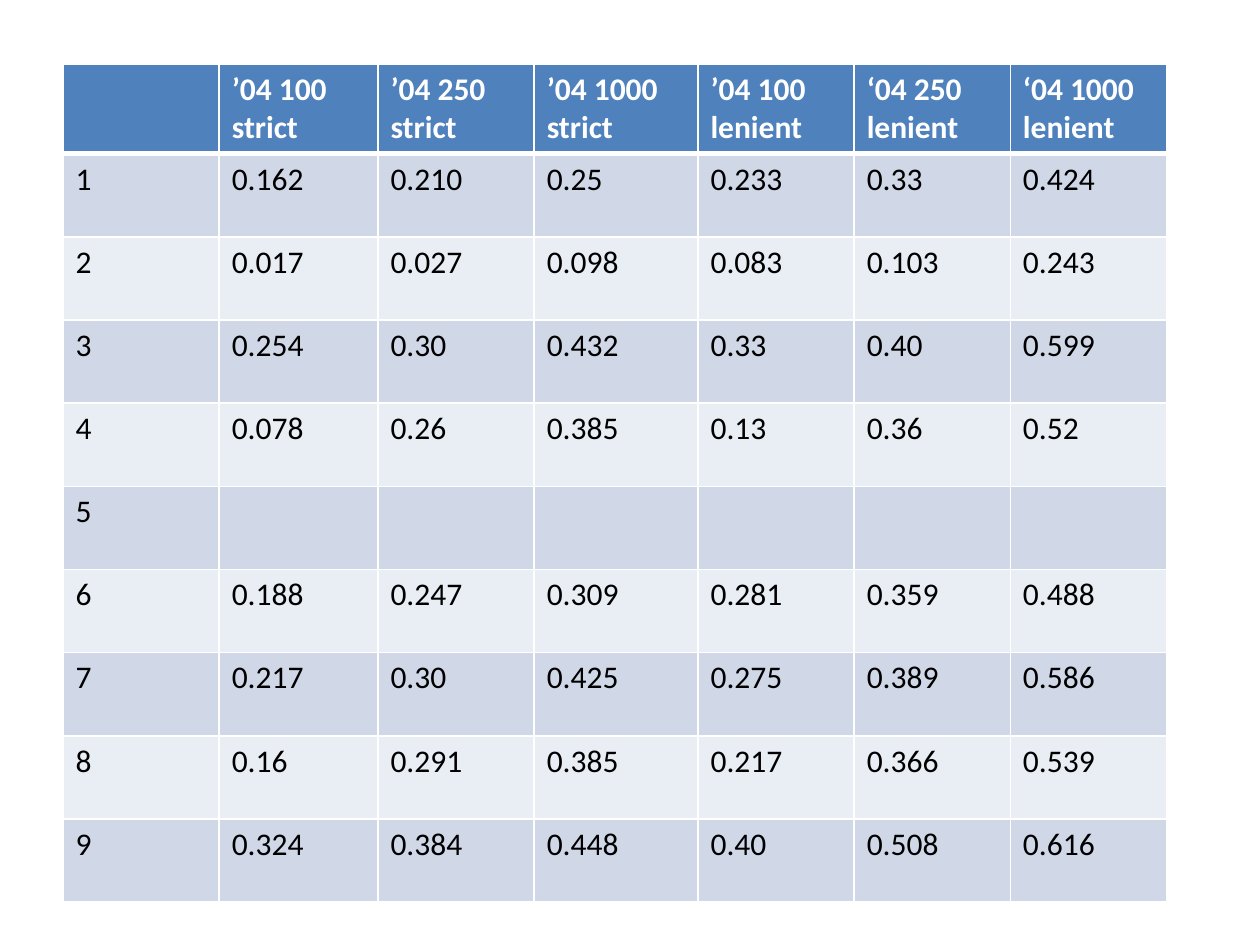
from lxml import etree
from pptx import Presentation
from pptx.dml.color import RGBColor
from pptx.oxml.ns import qn
from pptx.util import Inches, Pt

HEADER, DARK_BAND, LIGHT_BAND = "4F81BD", "D0D8E8", "E9EDF4"
WHITE, BLACK = "FFFFFF", "000000"
COL_WIDTHS = [1.24, 1.26, 1.24, 1.3, 1.24, 1.24, 1.24]
ROW_HEIGHT = 0.66
ROWS = [
    ["", "’04 100\nstrict", "’04 250\nstrict", "’04 1000\nstrict",
     "’04 100\nlenient", "‘04 250\nlenient", "‘04 1000\nlenient"],
    ["1", "0.162", "0.210", "0.25", "0.233", "0.33", "0.424"],
    ["2", "0.017", "0.027", "0.098", "0.083", "0.103", "0.243"],
    ["3", "0.254", "0.30", "0.432", "0.33", "0.40", "0.599"],
    ["4", "0.078", "0.26", "0.385", "0.13", "0.36", "0.52"],
    ["5", "", "", "", "", "", ""],
    ["6", "0.188", "0.247", "0.309", "0.281", "0.359", "0.488"],
    ["7", "0.217", "0.30", "0.425", "0.275", "0.389", "0.586"],
    ["8", "0.16", "0.291", "0.385", "0.217", "0.366", "0.539"],
    ["9", "0.324", "0.384", "0.448", "0.40", "0.508", "0.616"],
]


def rgb(value):
    return RGBColor.from_string(value)


def add_border(cell, side, points):
    """Draw a white line on one side (L, R, T or B); call before filling the cell."""
    tc_pr = cell._tc.get_or_add_tcPr()
    line = etree.SubElement(tc_pr, qn(f"a:ln{side}"), w=str(Pt(points)))
    fill = etree.SubElement(line, qn("a:solidFill"))
    etree.SubElement(fill, qn("a:srgbClr"), val=WHITE)


prs = Presentation()
prs.slide_width, prs.slide_height = Inches(10), Inches(7.5)
s = prs.slides.add_slide(prs.slide_layouts[6])

table = s.shapes.add_table(
    len(ROWS), len(COL_WIDTHS), Inches(0.5), Inches(0.51),
    Inches(sum(COL_WIDTHS)), Inches(ROW_HEIGHT * len(ROWS))).table
for column, width in zip(table.columns, COL_WIDTHS):
    column.width = Inches(width)

for i, values in enumerate(ROWS):
    table.rows[i].height = Inches(ROW_HEIGHT)
    is_header = i == 0
    band = HEADER if is_header else DARK_BAND if i % 2 else LIGHT_BAND
    for j, value in enumerate(values):
        cell = table.cell(i, j)
        for side in "LRTB":
            at_header_edge = (i, side) in [(0, "B"), (1, "T")]
            add_border(cell, side, 3 if at_header_edge else 1)
        cell.fill.solid()
        cell.fill.fore_color.rgb = rgb(band)
        cell.text = value
        for p in cell.text_frame.paragraphs:
            p.font.name = "Calibri"
            p.font.size = Pt(18)
            p.font.bold = is_header
            p.font.color.rgb = rgb(WHITE if is_header else BLACK)

prs.save("out.pptx")
